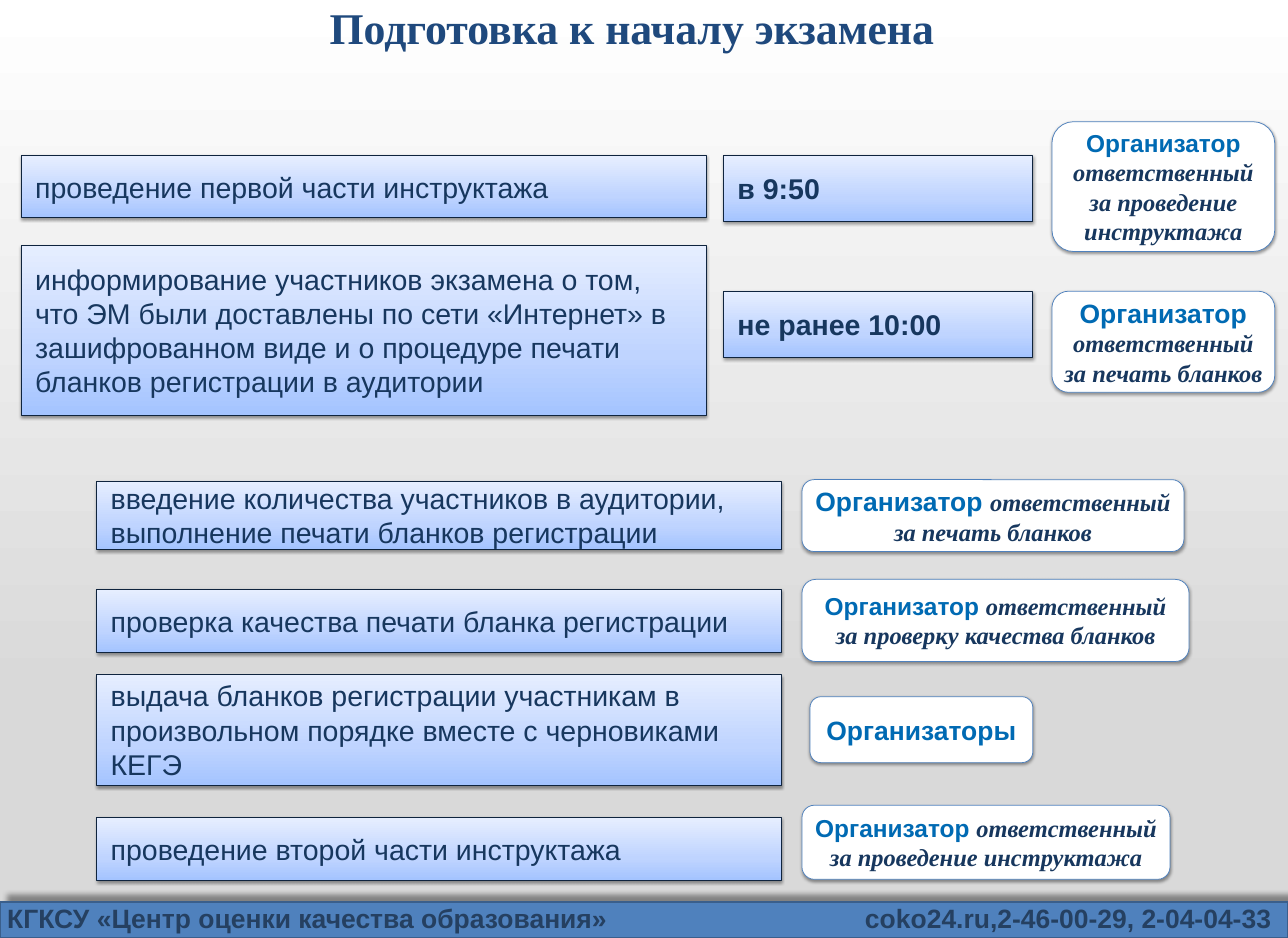
from copy import deepcopy

from lxml.etree import SubElement
from pptx import Presentation
from pptx.dml.color import RGBColor
from pptx.enum.shapes import MSO_SHAPE
from pptx.enum.text import MSO_ANCHOR, PP_ALIGN
from pptx.oxml.ns import qn
from pptx.util import Inches, Pt

WHITE = RGBColor(0xFF, 0xFF, 0xFF)
GREY = RGBColor(0xD9, 0xD9, 0xD9)
BLUE = RGBColor(0x4F, 0x81, 0xBD)
FOOTER_LINE = RGBColor(0x3A, 0x5F, 0x8C)
FOOTER_TEXT = RGBColor(0x25, 0x40, 0x61)
TITLE_TEXT = RGBColor(0x1F, 0x49, 0x7D)
TASK_LINE = RGBColor(0x0F, 0x24, 0x3E)
TASK_TEXT = RGBColor(0x17, 0x37, 0x5E)
ROLE_TEXT = RGBColor(0x00, 0x6A, 0xB3)
TASK_STOPS = [(0, RGBColor(0xA4, 0xC4, 0xFF)), (0.35, RGBColor(0xBF, 0xD4, 0xFF)),
              (1, RGBColor(0xE6, 0xEE, 0xFF))]
PAGE_STOPS = [(0, WHITE), (0.74, GREY), (1, GREY)]

SANS, SERIF = "Arial", "Times New Roman"
PAGE_W, PAGE_H = 17.57, 12.79
TASK_W = 9.34

# top, height, task; time top; role top, height, role size, duty
TIMED_STEPS = [
    (2.12, 0.85, "проведение первой части инструктажа", 2.12, "в 9:50",
     1.66, 1.77, 24, "ответственный за проведение инструктажа"),
    (3.34, 2.32, "информирование участников экзамена о том, что ЭМ были доставлены "
     "по сети «Интернет» в зашифрованном виде и о процедуре печати бланков "
     "регистрации в аудитории", 3.97, "не ранее 10:00",
     3.97, 1.38, 26, "ответственный за печать бланков"),
]
# top, height, task; role box, role size, role, duty
ROOM_STEPS = [
    (6.56, 0.93, "введение количества участников в аудитории, выполнение печати "
     "бланков регистрации", (10.94, 6.54, 5.21, 0.98), 26,
     "Организатор", "ответственный за печать бланков"),
    (8.04, 0.85, "проверка качества печати бланка регистрации",
     (10.94, 7.9, 5.28, 1.12), 24,
     "Организатор", "ответственный за проверку качества бланков"),
    (9.19, 1.52, "выдача бланков регистрации участникам в произвольном порядке "
     "вместе с черновиками КЕГЭ", (11.05, 9.5, 3.04, 0.9), 26, "Организаторы", ""),
    (11.15, 0.85, "проведение второй части инструктажа",
     (10.94, 10.98, 5.02, 1.01), 24,
     "Организатор", "ответственный за проведение инструктажа"),
]


def set_font(font, name, size, color, bold=False, italic=False):
    font.name, font.size = name, Pt(size)
    font.bold, font.italic = bold, italic
    font.color.rgb = color


def set_gradient(fill, stops, angle):
    fill.gradient()
    fill.gradient_angle = angle
    first = fill.gradient_stops[0]._gs
    for _ in range(len(stops) - len(fill.gradient_stops)):
        first.addnext(deepcopy(first))
    for stop, (position, color) in zip(fill.gradient_stops, stops):
        stop.position = position
        stop.color.rgb = color


def add_box(slide, kind, box, line_color, line_width=0.75, shadow=(38, 3.1, 1.6, 90)):
    """Outlined shape with an outer shadow: opacity, blur, distance, direction."""
    shape = slide.shapes.add_shape(kind, *map(Inches, box))
    shape.line.color.rgb = line_color
    shape.line.width = Pt(line_width)
    shape.shadow.inherit = False
    opacity, blur, distance, direction = shadow
    effects = shape._element.spPr.find(qn("a:effectLst"))
    outer = SubElement(effects, qn("a:outerShdw"), blurRad=str(Pt(blur)),
                       dist=str(Pt(distance)), dir=str(direction * 60000),
                       algn="ctr", rotWithShape="0")
    black = SubElement(outer, qn("a:srgbClr"), val="000000")
    SubElement(black, qn("a:alpha"), val=str(opacity * 1000))
    return shape


def add_task(slide, box, text, bold=False):
    task = add_box(slide, MSO_SHAPE.RECTANGLE, box, TASK_LINE)
    set_gradient(task.fill, TASK_STOPS, 90)
    frame = task.text_frame
    frame.word_wrap = True
    frame.vertical_anchor = MSO_ANCHOR.MIDDLE
    frame.margin_left = frame.margin_right = Inches(0.19)
    frame.margin_top = frame.margin_bottom = Inches(0.1)
    line = frame.paragraphs[0]
    line.text = text
    line.alignment = PP_ALIGN.LEFT
    set_font(line.font, SANS, 28, TASK_TEXT, bold)


def add_role(slide, box, size, role, duty):
    card = add_box(slide, MSO_SHAPE.ROUNDED_RECTANGLE, box, BLUE)
    card.fill.solid()
    card.fill.fore_color.rgb = WHITE
    frame = card.text_frame
    frame.word_wrap = True
    frame.vertical_anchor = MSO_ANCHOR.MIDDLE
    line = frame.paragraphs[0]
    line.alignment = PP_ALIGN.CENTER
    role_run = line.add_run()
    role_run.text = f"{role} " if duty else role
    set_font(role_run.font, SANS, size, ROLE_TEXT, bold=True)
    if duty:
        duty_run = line.add_run()
        duty_run.text = duty
        set_font(duty_run.font, SERIF, 24, TASK_TEXT, bold=True, italic=True)


def add_title(slide, box):
    title = slide.shapes.title
    title.left, title.top, title.width, title.height = map(Inches, box)
    title.text_frame.vertical_anchor = MSO_ANCHOR.TOP
    heading = title.text_frame.paragraphs[0]
    heading.text = "Подготовка к началу экзамена"
    heading.alignment = PP_ALIGN.CENTER
    heading.line_spacing = 0.9
    set_font(heading.font, SERIF, 43, TITLE_TEXT, bold=True)


def add_footer(slide, box):
    left, top, width, height = box
    band = add_box(slide, MSO_SHAPE.RECTANGLE, box, FOOTER_LINE, 2, (40, 4, 10, 315))
    band.fill.solid()
    band.fill.fore_color.rgb = BLUE
    contacts = slide.shapes.add_textbox(Inches(left), Inches(top - 0.05),
                                        Inches(width - 0.1), Inches(height + 0.05))
    contacts.text_frame.word_wrap = True
    line = contacts.text_frame.paragraphs[0]
    line.text = "КГКСУ «Центр оценки качества образования»\tcoko24.ru,2-46-00-29, 2-04-04-33"
    # Right tab sets the contacts against the right edge
    tabs = SubElement(line._p.get_or_add_pPr(), qn("a:tabLst"))
    SubElement(tabs, qn("a:tab"), pos=str(Inches(width - 0.32)), algn="r")
    set_font(line.font, SANS, 26, FOOTER_TEXT, bold=True)


def add_timed_steps(slide, left):
    for top, height, task, time_top, time, role_top, role_height, size, duty in TIMED_STEPS:
        add_task(slide, (left, top, TASK_W, height), task)
        add_task(slide, (left + 9.58, time_top, 4.22, 0.9), time, bold=True)
        add_role(slide, (left + 14.06, role_top, 3.04, role_height), size,
                 "Организатор", duty)


def add_room_steps(slide, left):
    for top, height, task, role_box, size, role, duty in ROOM_STEPS:
        add_task(slide, (left, top, TASK_W, height), task)
        add_role(slide, role_box, size, role, duty)


def main():
    deck = Presentation()
    deck.slide_width, deck.slide_height = Inches(PAGE_W), Inches(PAGE_H)
    slide = deck.slides.add_slide(deck.slide_layouts[5])
    set_gradient(slide.background.fill, PAGE_STOPS, 270)
    add_footer(slide, (0, 12.3, PAGE_W, 0.49))
    add_title(slide, (1.04, 0.04, 15.16, 1.04))
    add_timed_steps(slide, 0.29)
    add_room_steps(slide, 1.32)
    deck.save("out.pptx")


if __name__ == "__main__":
    main()
